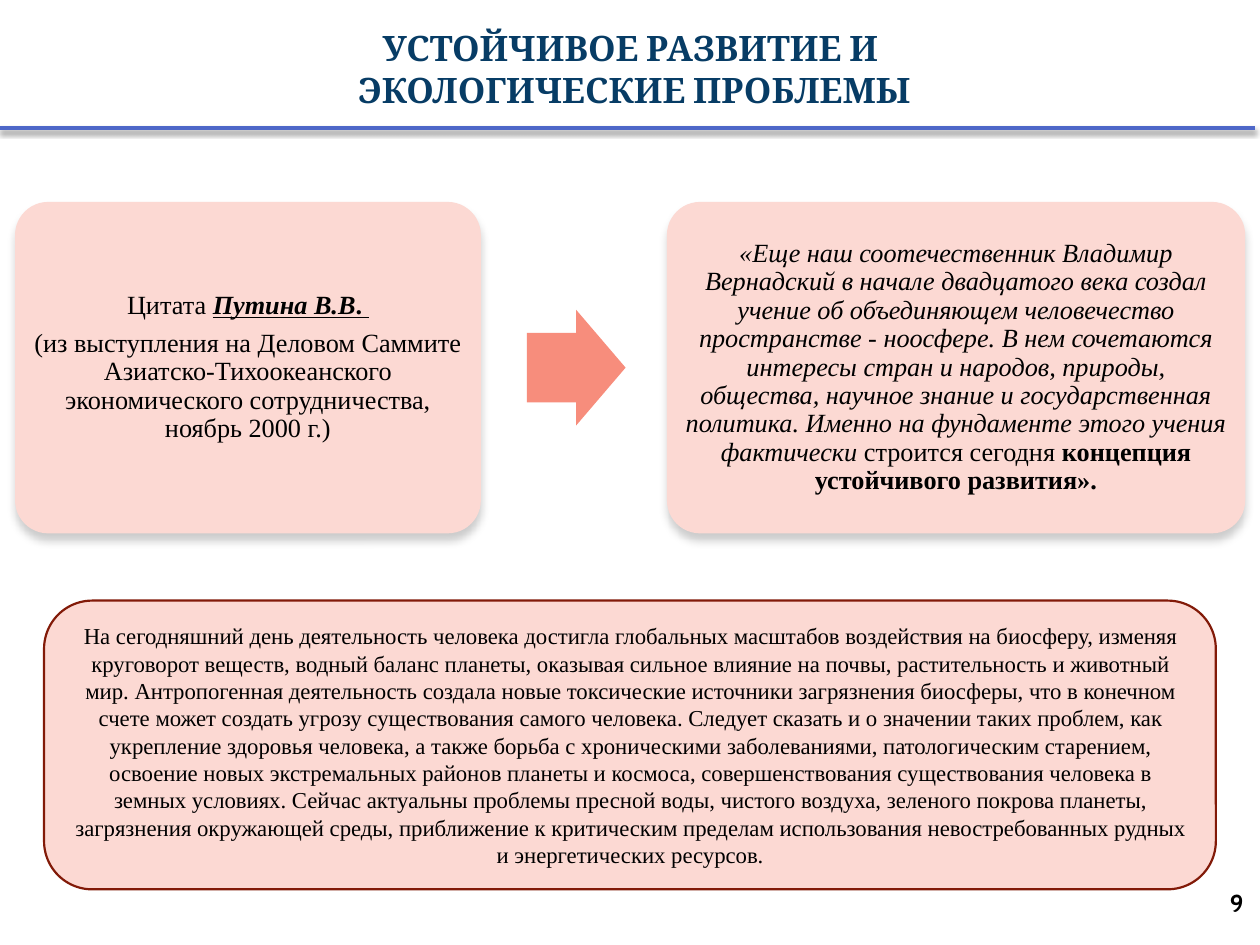
import pptx
import pptx.util
import pptx.dml.color
import pptx.enum.shapes
import pptx.enum.text
import pptx.oxml
import pptx.oxml.ns

Pt = pptx.util.Pt
SHAPE = pptx.enum.shapes.MSO_SHAPE
ALIGN = pptx.enum.text.PP_ALIGN
ANCHOR = pptx.enum.text.MSO_ANCHOR

TITLE = [[("УСТОЙЧИВОЕ РАЗВИТИЕ И ", "")], [("ЭКОЛОГИЧЕСКИЕ ПРОБЛЕМЫ", "")]]
SPEAKER = [
    [("Цитата ", ""), ("Путина В.В", "biu"), (". ", "bu")],
    [("(из выступления на Деловом Саммите Азиатско-Тихоокеанского "
      "экономического сотрудничества, ноябрь 2000 г.)", "")],
]
QUOTE = [[
    ("«Еще наш соотечественник Владимир Вернадский в начале двадцатого века "
     "создал учение об объединяющем человечество пространстве - ноосфере. "
     "В нем сочетаются интересы стран и народов, природы, общества, научное "
     "знание и государственная политика. Именно на фундаменте этого учения "
     "фактически ", "i"),
    ("строится сегодня ", ""),
    ("концепция устойчивого развития».", "b"),
]]
PROBLEM_SENTENCES = [
    "На сегодняшний день деятельность человека достигла глобальных масштабов "
    "воздействия на биосферу, изменяя круговорот веществ, водный баланс планеты, "
    "оказывая сильное влияние на почвы, растительность и животный мир.",
    "Антропогенная деятельность создала новые токсические источники загрязнения "
    "биосферы, что в конечном счете может создать угрозу существования самого "
    "человека.",
    "Следует сказать и о значении таких проблем, как укрепление здоровья "
    "человека, а также борьба с хроническими заболеваниями, патологическим "
    "старением, освоение новых экстремальных районов планеты и космоса, "
    "совершенствования существования человека в земных условиях.",
    "Сейчас актуальны проблемы пресной воды, чистого воздуха, зеленого покрова "
    "планеты, загрязнения окружающей среды, приближение к критическим пределам "
    "использования невостребованных рудных и энергетических ресурсов.",
]
PAGE = [[("9", "")]]

THEME = {
    "title": ("Cambria", 20, "073C65", True),
    "card": ("Times New Roman", 15, "000000", None),
    "body": ("Times New Roman", 13, "000000", None),
    "page": ("Cabin", 14, "000000", True),
    "panel": "FCD9D3",
    "arrow": "F78D7C",
    "border": "821A08",
    "rule": "4E67C8",
}

CARD_TOP, CARD_HEIGHT = 115.4, 189.4
SPEAKER_LEFT, SPEAKER_WIDTH = 8.6, 266.2
QUOTE_LEFT, QUOTE_WIDTH = 381.1, 330.5
ARROW_LEFT, ARROW_WIDTH, ARROW_HEIGHT = 301.1, 56.4, 66


def rgb(value):
    return pptx.dml.color.RGBColor.from_string(value)


def write(frame, paragraphs, role, align=ALIGN.CENTER, anchor=ANCHOR.MIDDLE):
    frame.word_wrap = True
    frame.vertical_anchor = anchor
    face, size, colour, bold = THEME[role]
    for index, runs in enumerate(paragraphs):
        paragraph = frame.paragraphs[0] if index == 0 else frame.add_paragraph()
        paragraph.alignment = align
        font = paragraph.font
        font.name, font.size, font.bold = face, Pt(size), bold
        font.color.rgb = rgb(colour)
        for words, style in runs:
            run = paragraph.add_run()
            run.text = words
            if "b" in style:
                run.font.bold = True
            if "i" in style:
                run.font.italic = True
            if "u" in style:
                run.font.underline = True


def add_text(slide, box, paragraphs, role, **layout):
    frame = slide.shapes.add_textbox(*map(Pt, box)).text_frame
    write(frame, paragraphs, role, **layout)


def add_block(slide, preset, box, fill, adjustments=()):
    block = slide.shapes.add_shape(preset, *map(Pt, box))
    block.shadow.inherit = False
    block.fill.solid()
    block.fill.fore_color.rgb = rgb(fill)
    block.line.fill.background()
    for index, value in enumerate(adjustments):
        block.adjustments[index] = value
    return block


def cast_shadow(part, opacity, blur, distance):
    properties = part._element.spPr
    for effects in properties.findall(pptx.oxml.ns.qn("a:effectLst")):
        properties.remove(effects)
    properties.append(pptx.oxml.parse_xml(
        f'<a:effectLst {pptx.oxml.ns.nsdecls("a")}>'
        f'<a:outerShdw blurRad="{Pt(blur)}" dist="{Pt(distance)}" dir="5400000" '
        f'algn="ctr" rotWithShape="0"><a:srgbClr val="000000">'
        f'<a:alpha val="{opacity * 1000}"/></a:srgbClr></a:outerShdw></a:effectLst>'))


def add_card(slide, left, width, paragraphs):
    card = add_block(slide, SHAPE.ROUNDED_RECTANGLE,
                     (left, CARD_TOP, width, CARD_HEIGHT), THEME["panel"], [0.1])
    cast_shadow(card, 20, 5, 4)
    frame = card.text_frame
    frame.margin_left = frame.margin_right = Pt(4.2)
    frame.margin_top = frame.margin_bottom = Pt(4.2)
    write(frame, paragraphs, "card")
    for paragraph in frame.paragraphs:
        paragraph.line_spacing = 0.9
        paragraph.space_after = Pt(5.25)


def main():
    deck = pptx.Presentation()
    deck.slide_width, deck.slide_height = Pt(720), Pt(540)
    slide = deck.slides.add_slide(deck.slide_layouts[6])

    add_text(slide, (669.6, 502.6, 48.2, 26.6), PAGE, "page", align=ALIGN.RIGHT)
    add_text(slide, (33.8, 11.5, 657.4, 55.4), TITLE, "title", anchor=ANCHOR.TOP)

    add_card(slide, SPEAKER_LEFT, SPEAKER_WIDTH, SPEAKER)
    add_card(slide, QUOTE_LEFT, QUOTE_WIDTH, QUOTE)
    arrow_top = CARD_TOP + (CARD_HEIGHT - ARROW_HEIGHT) / 2
    add_block(slide, SHAPE.RIGHT_ARROW,
              (ARROW_LEFT, arrow_top, ARROW_WIDTH, ARROW_HEIGHT),
              THEME["arrow"], [0.6, 0.5])

    problems = add_block(slide, SHAPE.ROUNDED_RECTANGLE,
                         (25.2, 343.2, 669.6, 165), THEME["panel"])
    problems.line.color.rgb = rgb(THEME["border"])
    problems.line.width = Pt(1.25)
    write(problems.text_frame, [[(" ".join(PROBLEM_SENTENCES), "")]], "body")

    rule = slide.shapes.add_connector(
        pptx.enum.shapes.MSO_CONNECTOR.STRAIGHT, Pt(0), Pt(73.2), Pt(717.2), Pt(73.2))
    rule.line.color.rgb = rgb(THEME["rule"])
    rule.line.width = Pt(2)
    cast_shadow(rule, 45, 3.1, 1.8)

    deck.save("out.pptx")


if __name__ == "__main__":
    main()
